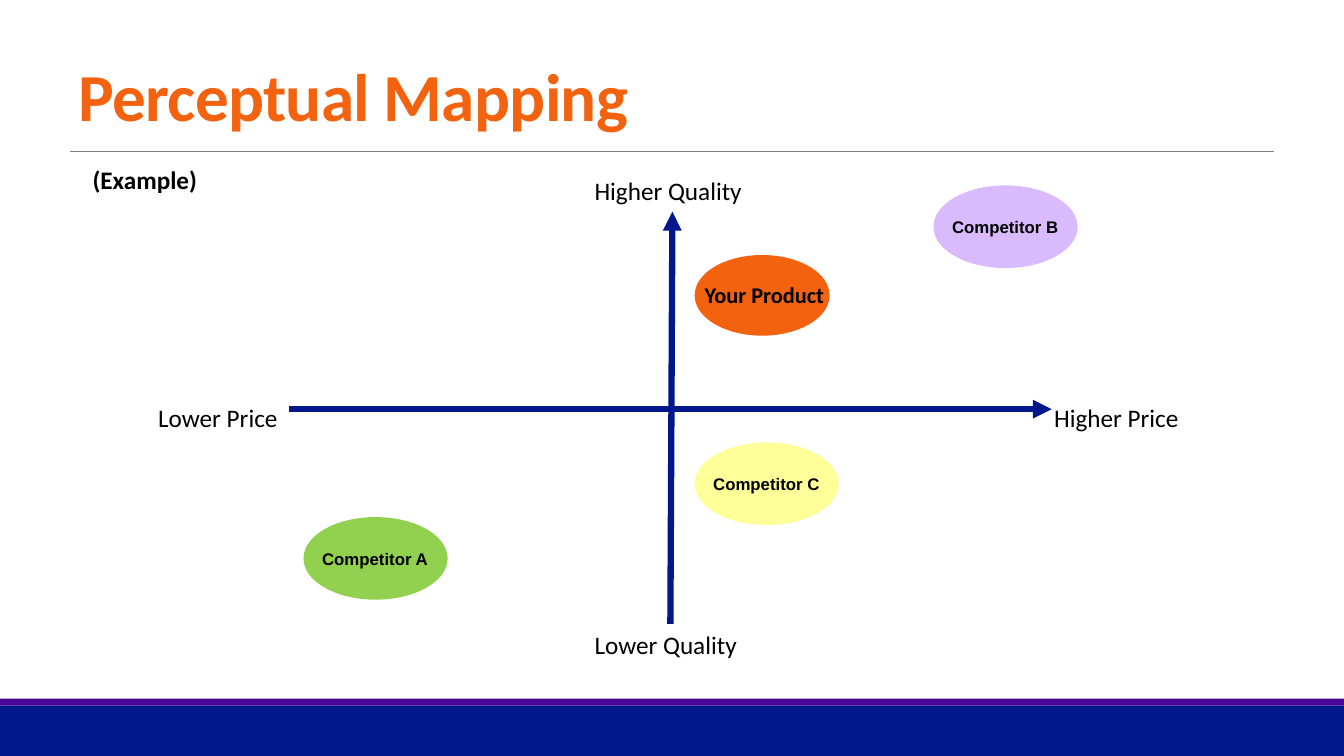
from pptx import Presentation
from pptx.dml.color import RGBColor
from pptx.enum.shapes import MSO_CONNECTOR, MSO_SHAPE
from pptx.enum.text import MSO_ANCHOR, MSO_AUTO_SIZE
from pptx.oxml.ns import qn
from pptx.util import Inches, Pt
from lxml import etree

RECTANGLE = MSO_SHAPE.RECTANGLE
OVAL = MSO_SHAPE.OVAL
STRAIGHT = MSO_CONNECTOR.STRAIGHT
TOP = MSO_ANCHOR.TOP
BOTTOM = MSO_ANCHOR.BOTTOM
NO_RESIZE = MSO_AUTO_SIZE.NONE

NAVY = "03178C"
PURPLE = "480599"
ORANGE = "F2620F"
GREY = "808080"
BLACK = "000000"


def color(value):
    return RGBColor.from_string(value)


class Canvas:
    """Draws on a slide divided into 100 columns and 100 rows."""

    font = "Calibri"

    def __init__(self, presentation):
        self.column = presentation.slide_width / 100
        self.row = presentation.slide_height / 100
        self.slide = presentation.slides.add_slide(presentation.slide_layouts[6])

    def place(self, left, top, width, height):
        return (round(left * self.column), round(top * self.row),
                round(width * self.column), round(height * self.row))

    def block(self, kind, box, fill, parent=None):
        shapes = (parent or self.slide).shapes
        shape = shapes.add_shape(kind, *self.place(*box))
        shape.shadow.inherit = False
        shape.fill.solid()
        shape.fill.fore_color.rgb = color(fill)
        shape.line.fill.background()

    def text(self, words, box, size=18, bold=False, ink=BLACK, font=None,
             anchor=TOP, wrap=True, parent=None):
        shapes = (parent or self.slide).shapes
        shape = shapes.add_textbox(*self.place(*box))
        frame = shape.text_frame
        frame.word_wrap = wrap
        frame.auto_size = NO_RESIZE
        frame.vertical_anchor = anchor
        paragraph = frame.paragraphs[0]
        paragraph.text = words
        paragraph.font.name = font or self.font
        paragraph.font.size = Pt(size)
        paragraph.font.bold = bold
        paragraph.font.color.rgb = color(ink)
        return paragraph

    def title(self, words, box):
        paragraph = self.text(words, box, 48, True, ORANGE, anchor=BOTTOM)
        paragraph.line_spacing = 0.85
        paragraph.runs[0].font._element.set("spc", "-50")

    def line(self, start, end, ink, weight, arrow=False):
        connector = self.slide.shapes.add_connector(
            STRAIGHT, *self.place(*start, *end))
        connector.line.color.rgb = color(ink)
        connector.line.width = Pt(weight)
        if arrow:
            outline = connector.line._get_or_add_ln()
            etree.SubElement(outline, qn("a:tailEnd"), type="triangle")
        etree.SubElement(connector._element.spPr, qn("a:effectLst"))

    def product(self, words, oval, label, fill, size, font=None):
        group = self.slide.shapes.add_group_shape()
        self.block(OVAL, oval, fill, group)
        self.text(words, label, size, True, font=font, parent=group)

    def competitor(self, words, left, top, fill):
        self.product(words, (left, top, 10.73, 10.93),
                     (left + 0.65, top + 3.47, 9.45, 4), fill, 12, "Arial")


def main():
    presentation = Presentation()
    presentation.slide_width = Inches(13.33)
    presentation.slide_height = Inches(7.5)
    canvas = Canvas(presentation)

    canvas.block(RECTANGLE, (0, 93.33, 100, 6.67), NAVY)
    canvas.block(RECTANGLE, (0, 92.4, 100, 0.93), PURPLE)
    canvas.line((5.18, 20), (94.8, 20), GREY, 0.5)
    canvas.title("Perceptual Mapping", (5.1, 4.13, 89.8, 14.4))

    canvas.line((21.53, 54.13), (78.25, 54.13), NAVY, 4.5, arrow=True)
    canvas.line((49.88, 82.53), (50.03, 28), NAVY, 4.5, arrow=True)
    for words, left, top in (
        ("Lower Price", 11.03, 52.53),
        ("Higher Price", 77.7, 52.53),
        ("Lower Quality", 43.5, 82.53),
        ("Higher Quality", 43.5, 22.53),
    ):
        canvas.text(words, (left, top, 17.1, 5.33))

    canvas.product("Your Product", (51.68, 33.73, 10.05, 10.67),
                   (51.68, 36.53, 11.03, 5.87), ORANGE, 16)
    for words, left, top, fill in (
        ("Competitor C", 51.68, 58.53, "FFFF99"),
        ("Competitor B", 69.45, 24.53, "D9BBFD"),
        ("Competitor A", 22.58, 68.4, "92D050"),
    ):
        canvas.competitor(words, left, top, fill)

    canvas.text("(Example)", (6.15, 21.07, 9.75, 5.33), bold=True, wrap=False)
    presentation.save("out.pptx")


if __name__ == "__main__":
    main()
